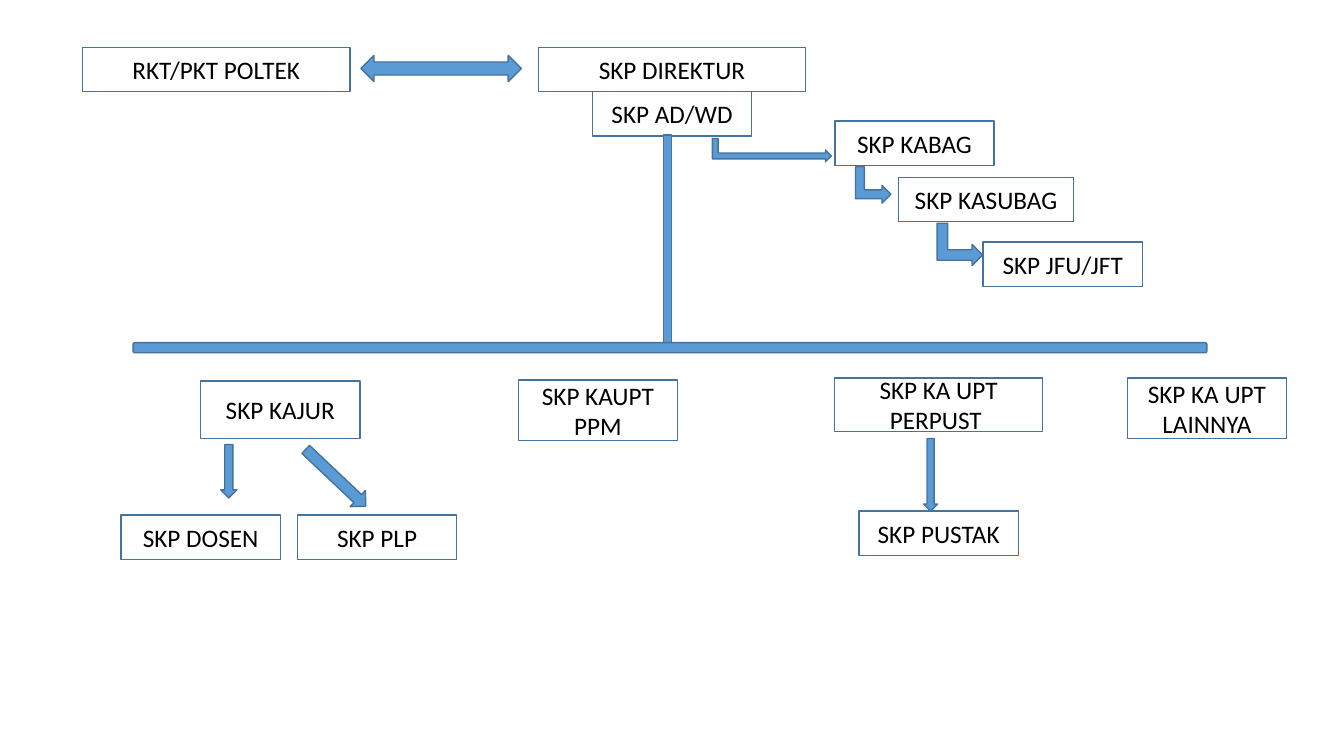
from pptx import Presentation
from pptx.dml.color import RGBColor
from pptx.enum.shapes import MSO_SHAPE
from pptx.enum.text import MSO_ANCHOR, PP_ALIGN
from pptx.util import Inches, Pt

RECTANGLE = MSO_SHAPE.RECTANGLE
ROUNDED = MSO_SHAPE.ROUNDED_RECTANGLE
DOWN_ARROW = MSO_SHAPE.DOWN_ARROW
BENT_ARROW = MSO_SHAPE.BENT_UP_ARROW
DOUBLE_ARROW = MSO_SHAPE.LEFT_RIGHT_ARROW
MIDDLE = MSO_ANCHOR.MIDDLE
CENTER = PP_ALIGN.CENTER

WHITE, BLACK, BLUE, OUTLINE = "FFFFFF", "000000", "5B9BD5", "43739E"
BOX_WIDTH, BOX_HEIGHT = 1.58, 0.44
TOP_WIDTH = 2.65


def color(value):
    return RGBColor.from_string(value)


def add_block(slide, kind, left, top, width, height, fill=BLUE, rotation=0):
    shape = slide.shapes.add_shape(
        kind, Inches(left), Inches(top), Inches(width), Inches(height))
    shape.shadow.inherit = False
    shape.fill.solid()
    shape.fill.fore_color.rgb = color(fill)
    shape.line.color.rgb = color(OUTLINE)
    shape.line.width = Pt(1)
    shape.rotation = rotation
    return shape


def add_box(slide, text, left, top, width=BOX_WIDTH, height=BOX_HEIGHT):
    shape = add_block(slide, RECTANGLE, left, top, width, height, WHITE)
    frame = shape.text_frame
    frame.word_wrap = True
    frame.vertical_anchor = MIDDLE
    paragraph = frame.paragraphs[0]
    paragraph.text = text
    paragraph.alignment = CENTER
    paragraph.font.name = "Calibri"
    paragraph.font.size = Pt(18)
    paragraph.font.color.rgb = color(BLACK)


def add_leadership(slide, left, top):
    director_left = left + 4.52
    deputy_left = director_left + (TOP_WIDTH - BOX_WIDTH) / 2
    add_box(slide, "RKT/PKT POLTEK", left, top, TOP_WIDTH)
    add_box(slide, "SKP DIREKTUR", director_left, top, TOP_WIDTH)
    add_box(slide, "SKP AD/WD", deputy_left, top + BOX_HEIGHT)
    add_block(slide, DOUBLE_ARROW, left + 2.76, top + 0.08, 1.59, 0.26)


def add_administration(slide, left, top):
    for text, across, down, width in (
            ("SKP KABAG", 0, 0, BOX_WIDTH),
            ("SKP KASUBAG", 0.63, 0.56, 1.74),
            ("SKP JFU/JFT", 1.47, 1.2, BOX_WIDTH)):
        add_box(slide, text, left + across, top + down, width)
    for across, down, width, height in (
            (-0.74, -0.3, 0.23, 1.18),
            (0.2, 0.46, 0.36, 0.35),
            (1.03, 1, 0.42, 0.45)):
        add_block(slide, BENT_ARROW, left + across, top + down,
                  width, height, rotation=90)


def add_trunk(slide, left, top, width, height):
    bar_height = 0.1
    add_block(slide, RECTANGLE, left + 5.26, top, 0.08, height)
    add_block(slide, ROUNDED, left, top + height - bar_height,
              width, bar_height)


def add_units(slide, left, top):
    for text, across, down, width, height in (
            ("SKP KAJUR", 0.79, 0.03, BOX_WIDTH, 0.57),
            ("SKP KAUPT PPM", 3.94, 0.02, BOX_WIDTH, 0.6),
            ("SKP KA UPT PERPUST ", 7.08, 0, 2.06, 0.53),
            ("SKP KA UPT LAINNYA", 9.98, 0, BOX_WIDTH, 0.6),
            ("SKP DOSEN", 0, 1.36, BOX_WIDTH, BOX_HEIGHT),
            ("SKP PLP", 1.75, 1.36, BOX_WIDTH, BOX_HEIGHT),
            ("SKP PUSTAK", 7.32, 1.32, BOX_WIDTH, BOX_HEIGHT)):
        add_box(slide, text, left + across, top + down, width, height)
    for across, down, width, height, rotation in (
            (0.99, 0.66, 0.16, 0.53, 0),
            (2.02, 0.58, 0.22, 0.82, 313.4),
            (7.96, 0.6, 0.14, 0.72, 0)):
        add_block(slide, DOWN_ARROW, left + across, top + down,
                  width, height, rotation=rotation)


def main():
    presentation = Presentation()
    presentation.slide_width = Inches(13.33)
    presentation.slide_height = Inches(7.5)
    slide = presentation.slides.add_slide(presentation.slide_layouts[6])
    add_leadership(slide, 0.82, 0.47)
    add_administration(slide, 8.28, 1.2)
    add_trunk(slide, 1.32, 1.34, 10.65, 2.16)
    add_units(slide, 1.2, 3.75)
    presentation.save("out.pptx")


if __name__ == "__main__":
    main()
